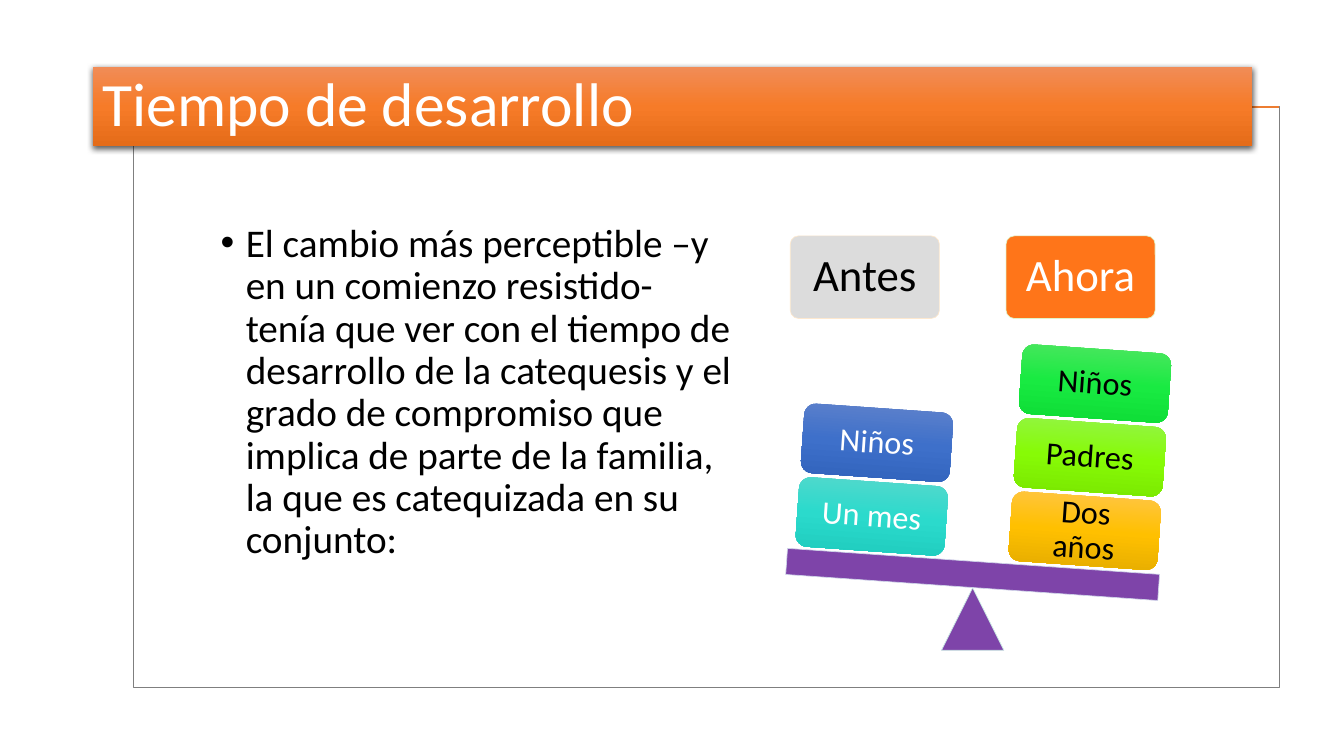
from copy import deepcopy
from math import cos, radians, sin

from lxml import etree
from pptx import Presentation
from pptx.dml.color import RGBColor
from pptx.enum.shapes import MSO_CONNECTOR, MSO_SHAPE
from pptx.enum.text import MSO_ANCHOR, PP_ALIGN
from pptx.oxml.ns import qn
from pptx.util import Pt

RECT, ROUND = MSO_SHAPE.RECTANGLE, MSO_SHAPE.ROUNDED_RECTANGLE
TRIANGLE = MSO_SHAPE.ISOSCELES_TRIANGLE
STRAIGHT = MSO_CONNECTOR.STRAIGHT
TOP, MIDDLE = MSO_ANCHOR.TOP, MSO_ANCHOR.MIDDLE
LEFT, CENTER = PP_ALIGN.LEFT, PP_ALIGN.CENTER

FONT = "Calibri"
TILT = 4  # degrees
WHITE = RGBColor(0xFF, 0xFF, 0xFF)
BLACK = RGBColor(0x00, 0x00, 0x00)
GRAY = RGBColor(0x7F, 0x7F, 0x7F)
ORANGE = RGBColor(0xED, 0x7D, 0x31)
PURPLE = RGBColor(0x70, 0x30, 0xA0)
BEFORE = RGBColor(0xD9, 0xD9, 0xD9)
NOW = RGBColor(0xFF, 0x66, 0x00)
BEFORE_EDGE = RGBColor(0xFF, 0xE8, 0xCC)
NOW_EDGE = RGBColor(0xDD, 0xF9, 0xCC)
PIVOT_EDGE = RGBColor(0xCD, 0xF2, 0xE7)
BEAM_EDGE = RGBColor(0xCF, 0xD6, 0xEA)


def shades(*codes):
    return [RGBColor.from_string(code) for code in codes]


TITLE_SHADES = shades("F18C57", "F67B28", "E56C19")
AMBER = shades("FFC64B", "FFC000", "E3AB00")
LIME = shades("94F44C", "87FB06", "78E500")
GREEN = shades("51E663", "19EA42", "0CDB34")
TEAL = shades("58D8CC", "2BDACC", "1ECBBD")
BLUE = shades("6183CB", "3E70CA", "3062BB")


def add_text(sp, text, size, color=BLACK, align=CENTER, anchor=MIDDLE,
             margins=(7.2, 3.6), bullet=False):
    tf = sp.text_frame
    tf.word_wrap = True
    tf.vertical_anchor = anchor
    tf.margin_left = tf.margin_right = Pt(margins[0])
    tf.margin_top = tf.margin_bottom = Pt(margins[1])
    p = tf.paragraphs[0]
    p.alignment, p.line_spacing = align, 0.9
    if bullet:
        pPr = p._p.get_or_add_pPr()
        pPr.set("marL", str(Pt(18)))
        pPr.set("indent", str(-Pt(18)))
        etree.SubElement(pPr, qn("a:buFont"), typeface="Arial")
        etree.SubElement(pPr, qn("a:buChar"), char="•")
    r = p.add_run()
    r.text = text
    r.font.name, r.font.size, r.font.color.rgb = FONT, Pt(size), color


def add_block(s, kind, x, y, w, h, fill, edge=None, edge_width=0.5, alpha=None, tilt=0):
    """Draw a preset shape; fill is one colour or a list of gradient colours."""
    sp = s.shapes.add_shape(kind, Pt(x), Pt(y), Pt(w), Pt(h))
    sp.shadow.inherit = False
    sp.rotation = tilt
    if isinstance(fill, list):
        sp.fill.gradient()
        sp.fill.gradient_angle = 270
        stops = sp._element.spPr.find(".//" + qn("a:gsLst"))
        stops.insert(1, deepcopy(stops[0]))
        for i, stop in enumerate(sp.fill.gradient_stops):
            stop.position, stop.color.rgb = i / 2, fill[i]
    else:
        sp.fill.solid()
        sp.fill.fore_color.rgb = fill
    if edge is None:
        sp.line.fill.background()
    else:
        sp.line.color.rgb, sp.line.width = edge, Pt(edge_width)
    if alpha:
        for clr in sp._element.spPr.iter(qn("a:srgbClr")):
            etree.SubElement(clr, qn("a:alpha"), val=str(alpha * 1000))
    return sp


def add_frame(s, x, y, w, h):
    add_block(s, RECT, x, y, w, h, WHITE, GRAY, 0.75)
    # Orange upper edge
    top = s.shapes.add_connector(STRAIGHT, Pt(x), Pt(y), Pt(x + w), Pt(y))
    top.line.color.rgb, top.line.width = ORANGE, Pt(1)
    etree.SubElement(top._element.spPr, qn("a:effectLst"))


def add_title(s, x, y, w, h):
    sp = add_block(s, RECT, x, y, w, h, TITLE_SHADES)
    effects = sp._element.spPr.find(qn("a:effectLst"))
    shadow = etree.SubElement(effects, qn("a:outerShdw"), blurRad=str(Pt(4.5)),
                              dist=str(Pt(1.5)), dir="5400000", rotWithShape="0")
    clr = etree.SubElement(shadow, qn("a:srgbClr"), val="000000")
    etree.SubElement(clr, qn("a:alpha"), val="63000")
    add_text(sp, "Tiempo de desarrollo", 44, WHITE, align=LEFT)


def add_body(s, x, y, w, h):
    sp = s.shapes.add_textbox(Pt(x), Pt(y), Pt(w), Pt(h))
    add_text(sp, "El cambio más perceptible –y en un comienzo resistido- tenía que ver "
             "con el tiempo de desarrollo de la catequesis y el grado de compromiso que "
             "implica de parte de la familia, la que es catequizada en su conjunto:",
             28, align=LEFT, anchor=TOP, bullet=True)


def add_balance(s, x, y, w, h):
    tile_w, tile_h, step = 106.5, 49.7, 52.7
    # Headings
    for dx, text, fill, edge, color in (
            (2.9, "Antes", BEFORE, BEFORE_EDGE, BLACK),
            (157, "Ahora", NOW, NOW_EDGE, WHITE)):
        sp = add_block(s, ROUND, x + dx, y, tile_w, 59, fill, edge, alpha=90)
        sp.adjustments[0] = 0.1
        add_text(sp, text, 32, color, margins=(11, 11))
    # Pivot and beam
    side = 44.6
    add_block(s, TRIANGLE, x + (w - side) / 2, y + h - side, side, side,
              PURPLE, PIVOT_EDGE, alpha=90)
    add_block(s, RECT, x, y + 232.5, w, 18.7, PURPLE, BEAM_EDGE, alpha=90, tilt=TILT)
    # Stacks of tiles, from the beam upwards
    stacks = (
        (160, 185.8, BLACK, (("Dos años", AMBER), ("Padres", LIME), ("Niños", GREEN))),
        (7.9, 175.5, WHITE, (("Un mes", TEAL), ("Niños", BLUE))),
    )
    for dx, dy, color, tiles in stacks:
        for i, (text, fill) in enumerate(tiles):
            rise = i * step
            sp = add_block(s, ROUND, x + dx + rise * sin(radians(TILT)),
                           y + dy - rise * cos(radians(TILT)),
                           tile_w, tile_h, fill, tilt=TILT)
            add_text(sp, text, 23, color, margins=(9.7, 9.7))


def main():
    prs = Presentation()
    prs.slide_width, prs.slide_height = Pt(960), Pt(540)
    s = prs.slides.add_slide(prs.slide_layouts[6])
    add_frame(s, 95.3, 76.4, 818.6, 414.7)
    add_title(s, 66.2, 47.8, 828, 56.6)
    add_body(s, 150.5, 156.2, 384.5, 320.4)
    add_balance(s, 561.6, 168.5, 266.4, 296)
    prs.save("out.pptx")


if __name__ == "__main__":
    main()
